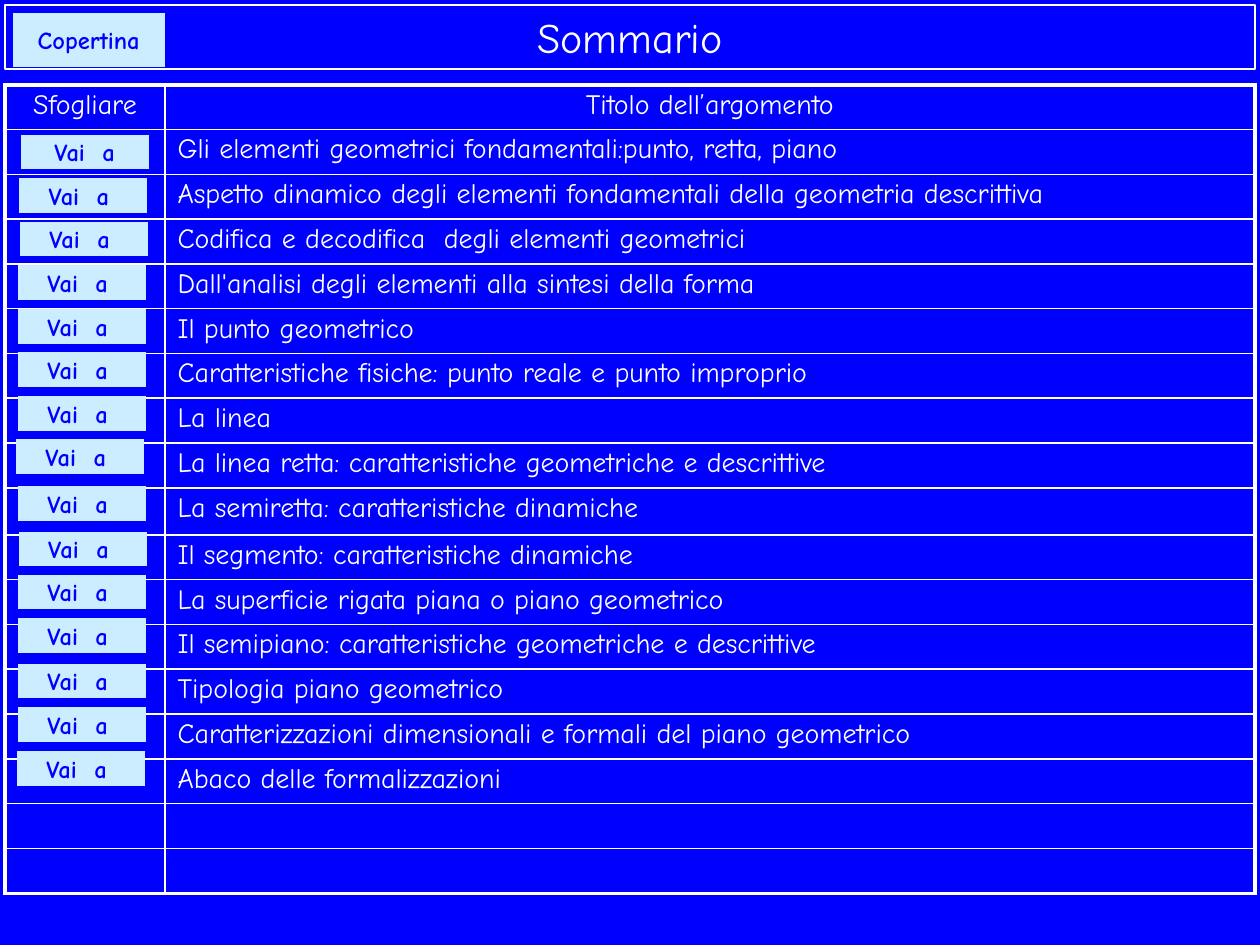
from pptx import Presentation
from pptx.dml.color import RGBColor
from pptx.enum import shapes, text
from pptx.oxml import parse_xml
from pptx.oxml.ns import nsdecls
from pptx.util import Pt

# Content
TITLE = "Sommario"
HEADINGS = ("Sfogliare", "Titolo dell’argomento")
COVER = ("Copertina", 7.2, 7.2, 87, 31)
# Topic, then left and top of its button
TOPICS = [
    ("Gli elementi geometrici fondamentali:punto, retta, piano", 11.8, 77),
    ("Aspetto dinamico degli elementi fondamentali della geometria descrittiva", 11, 101.7),
    ("Codifica e decodifica  degli elementi geometrici", 11.4, 126.7),
    ("Dall'analisi degli elementi alla sintesi della forma", 10.3, 151.5),
    ("Il punto geometrico", 10.3, 176.6),
    ("Caratteristiche fisiche: punto reale e punto improprio", 10.3, 201.2),
    ("La linea", 10.3, 226.3),
    ("La linea retta: caratteristiche geometriche e descrittive", 9.2, 251),
    ("La semiretta: caratteristiche dinamiche", 10.3, 278),
    ("Il segmento: caratteristiche dinamiche", 10.8, 303.8),
    ("La superficie rigata piana o piano geometrico", 10.3, 328.4),
    ("Il semipiano: caratteristiche geometriche e descrittive", 10.3, 353.2),
    ("Tipologia piano geometrico", 10.3, 379.3),
    ("Caratterizzazioni dimensionali e formali del piano geometrico", 10.3, 404),
    ("Abaco delle formalizzazioni", 9.7, 429.2),
]
SPARE_ROWS = 2

THEME = {
    "font": "Comic Neue",
    "blue": "0000FF", "white": "FFFFFF", "pale": "CCECFF",
    "title": 24, "table": 16, "button": 14,
    "thin": 1, "thick": 2.25,
}

# Layout in points
PAGE = (720, 540)
TITLE_BOX = (2.9, 2.9, 714.2, 36.7)
TABLE_LEFT, TABLE_TOP = 2.9, 48.5
COLUMNS = (91.4, 622.8)
ROW, TALL_ROW, TALL_INDEX = 25.5, 26.9, 9
BUTTON = (73.2, 19.8)


def color(name):
    return RGBColor.from_string(THEME[name])


def write(para, words, size, ink, bold=False, align=text.PP_ALIGN.CENTER):
    para.alignment = align
    span = para.add_run()
    span.text = words
    formats = {"name": THEME["font"], "size": Pt(THEME[size]), "bold": bold}
    for key, value in formats.items():
        setattr(span.font, key, value)
    span.font.color.rgb = color(ink)


def add_button(page, words, left, top, width, height):
    box = page.shapes.add_shape(
        shapes.MSO_SHAPE.ACTION_BUTTON_CUSTOM, Pt(left), Pt(top), Pt(width), Pt(height))
    box.shadow.inherit = False
    box.fill.solid()
    box.fill.fore_color.rgb = color("pale")
    box.line.fill.background()
    box.text_frame.vertical_anchor = text.MSO_ANCHOR.MIDDLE
    write(box.text_frame.paragraphs[0], words, "button", "blue", bold=True)


def set_borders(cell, widths):
    properties = cell._tc.get_or_add_tcPr()
    for side, width in widths.items():
        properties.append(parse_xml(
            f'<a:ln{side} {nsdecls("a")} w="{Pt(width)}"><a:solidFill>'
            f'<a:srgbClr val="{THEME["white"]}"/></a:solidFill></a:ln{side}>'))


def set_spacing(para):
    """Space before as a share of the type size, and the size of an empty line."""
    para.line_spacing = 0.9
    para.space_before = Pt(0)
    before = para._p.pPr.find("{*}spcBef")
    before.remove(before[0])
    before.append(parse_xml(f'<a:spcPct {nsdecls("a")} val="20000"/>'))
    para._p.append(parse_xml(
        f'<a:endParaRPr {nsdecls("a")} sz="{THEME["table"] * 100}">'
        f'<a:latin typeface="{THEME["font"]}"/></a:endParaRPr>'))


def add_topics(page):
    rows = [HEADINGS] + [("", topic[0]) for topic in TOPICS] + [("", "")] * SPARE_ROWS
    heights = [TALL_ROW if i == TALL_INDEX else ROW for i in range(len(rows))]
    table = page.shapes.add_table(
        len(rows), len(COLUMNS), Pt(TABLE_LEFT), Pt(TABLE_TOP),
        Pt(sum(COLUMNS)), Pt(sum(heights))).table
    table.first_row = table.horz_banding = False
    for column, width in zip(table.columns, COLUMNS):
        column.width = Pt(width)
    thin, thick = THEME["thin"], THEME["thick"]
    last_row, last_column = len(rows) - 1, len(COLUMNS) - 1
    for r, row in enumerate(rows):
        table.rows[r].height = Pt(heights[r])
        for c, words in enumerate(row):
            cell = table.cell(r, c)
            set_borders(cell, {
                "L": thick if c == 0 else thin,
                "R": thick if c == last_column else thin,
                "T": thick if r == 0 else thin,
                "B": thick if r == last_row else thin,
            })
            cell.fill.background()
            para = cell.text_frame.paragraphs[0]
            if words:
                align = text.PP_ALIGN.CENTER if r == 0 else text.PP_ALIGN.LEFT
                write(para, words, "table", "white", align=align)
            set_spacing(para)


def main():
    deck = Presentation()
    deck.slide_width, deck.slide_height = map(Pt, PAGE)
    page = deck.slides.add_slide(deck.slide_layouts[5])
    page.background.fill.solid()
    page.background.fill.fore_color.rgb = color("blue")

    # Title
    title = page.shapes.title
    title.left, title.top, title.width, title.height = map(Pt, TITLE_BOX)
    title.line.color.rgb = color("white")
    title.line.width = Pt(THEME["thin"])
    title.text_frame.vertical_anchor = text.MSO_ANCHOR.MIDDLE
    write(title.text_frame.paragraphs[0], TITLE, "title", "white")

    # Table of topics
    add_topics(page)

    # Buttons; the trailing space sets all but the first slightly left
    add_button(page, *COVER)
    for i, (_, left, top) in enumerate(TOPICS):
        add_button(page, "Vai  a " if i else "Vai  a", left, top, *BUTTON)

    deck.save("out.pptx")


if __name__ == "__main__":
    main()
